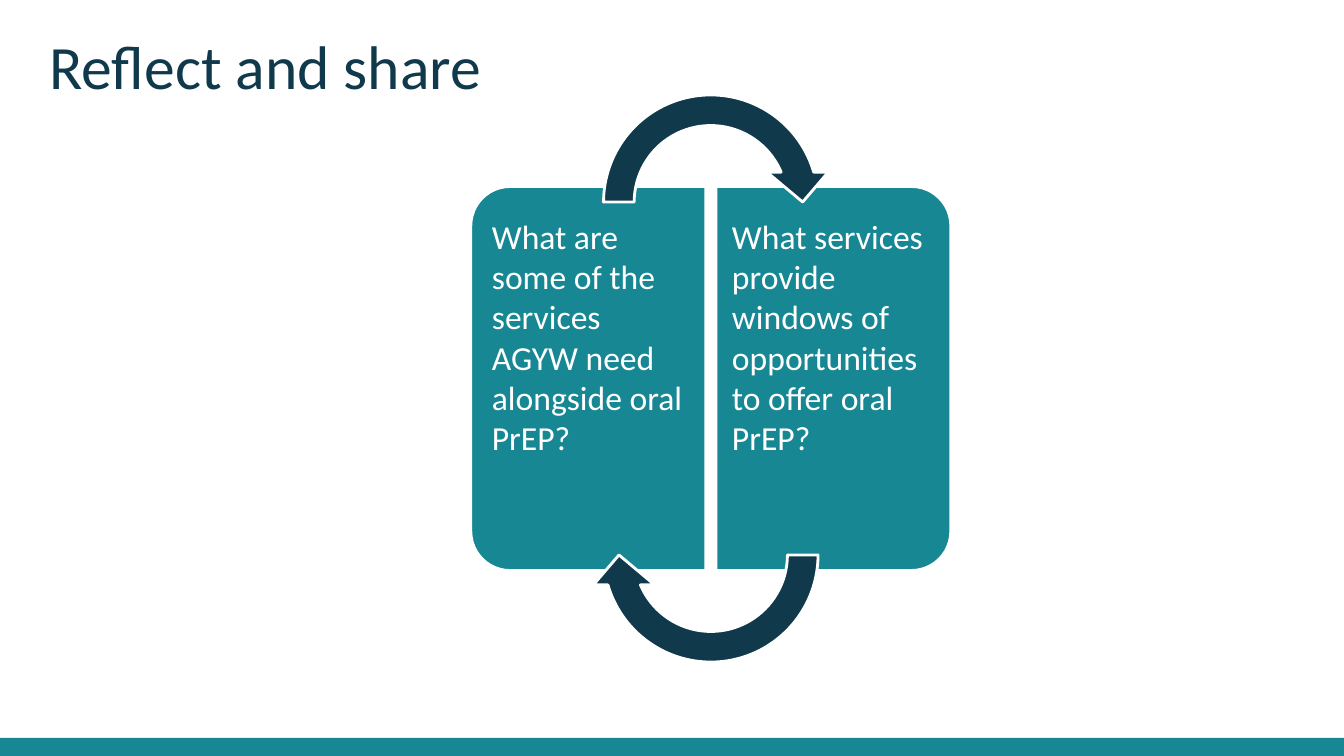
from dataclasses import dataclass

from pptx import Presentation
from pptx.dml.color import RGBColor
from pptx.enum.shapes import MSO_SHAPE
from pptx.enum.text import MSO_ANCHOR, PP_ALIGN
from pptx.util import Inches, Pt

RECTANGLE = MSO_SHAPE.RECTANGLE
CARD = MSO_SHAPE.ROUND_2_SAME_RECTANGLE
CYCLE_ARROW = MSO_SHAPE.CIRCULAR_ARROW
TOP = MSO_ANCHOR.TOP
LEFT = PP_ALIGN.LEFT
SLIDE_WIDTH, SLIDE_HEIGHT = 13.33, 7.5


@dataclass(frozen=True)
class Theme:
    teal: RGBColor = RGBColor(0x17, 0x87, 0x93)
    navy: RGBColor = RGBColor(0x10, 0x39, 0x4B)
    white: RGBColor = RGBColor(0xFF, 0xFF, 0xFF)
    font: str = "Calibri"
    title_size: float = 44
    title_spacing: float = 44.8
    question_size: float = 24
    outline: float = 2


THEME = Theme()
QUESTIONS = (
    "What are some of the services AGYW need alongside oral PrEP?",
    "What services provide windows of opportunities to offer oral PrEP?",
)


def add_text(slide, box, text, *, size, color, insets=(0.1, 0.05, 0.1, 0.05), spacing=None):
    frame = slide.shapes.add_textbox(*map(Inches, box)).text_frame
    frame.word_wrap = True
    frame.vertical_anchor = TOP
    frame.margin_left, frame.margin_top, frame.margin_right, frame.margin_bottom = map(Inches, insets)
    paragraph = frame.paragraphs[0]
    paragraph.alignment = LEFT
    if spacing:
        paragraph.line_spacing = Pt(spacing)
    run = paragraph.add_run()
    run.text = text
    run.font.name = THEME.font
    run.font.size = Pt(size)
    run.font.color.rgb = color


def add_block(slide, kind, box, fill, *, rotation=0, adjustments=(), outlined=True):
    block = slide.shapes.add_shape(kind, *map(Inches, box))
    block.shadow.inherit = False
    block.rotation = rotation
    for index, value in enumerate(adjustments):
        block.adjustments[index] = value
    block.fill.solid()
    block.fill.fore_color.rgb = fill
    if outlined:
        block.line.color.rgb = THEME.white
        block.line.width = Pt(THEME.outline)
    else:
        block.line.fill.background()


def add_footer(slide, box):
    add_block(slide, RECTANGLE, box, THEME.teal, outlined=False)


def add_title(slide, box):
    add_text(slide, box, "Reflect and share", size=THEME.title_size,
             color=THEME.navy, spacing=THEME.title_spacing)


def add_question(slide, box, question, *, rotation, outer_left):
    left, top, width, height = box
    add_block(slide, CARD, (left + (width - height) / 2, top + (height - width) / 2, height, width),
              THEME.teal, rotation=rotation, adjustments=(0.167, 0))
    outer, inner = 0.11, 0.01
    text_left = left + (outer if outer_left else inner)
    insets = (0.1, 0.17, 0.15, 0.17) if outer_left else (0.15, 0.17, 0.1, 0.17)
    add_text(slide, (text_left, top + 0.12, width - outer - inner, height - 0.23), question,
             size=THEME.question_size, color=THEME.white, insets=insets)


def add_cycle(slide, box):
    left, top, width, height = box
    card_width, card_height, arrow_size = 2.33, 3.81, 2.43
    card_top = top + 1.06
    pitch = width - card_width
    for index, question in enumerate(QUESTIONS):
        add_question(slide, (left + index * pitch, card_top, card_width, card_height), question,
                     rotation=90 if index else 270, outer_left=index == 0)
    arrow_left = left + (width - arrow_size) / 2
    for arrow_top, rotation in ((top, 0), (top + height - arrow_size, 180)):
        add_block(slide, CYCLE_ARROW, (arrow_left, arrow_top, arrow_size, arrow_size), THEME.navy,
                  rotation=rotation, adjustments=(0.125, 11.42, 204.58, 108, 0.125))


def main():
    deck = Presentation()
    deck.slide_width, deck.slide_height = Inches(SLIDE_WIDTH), Inches(SLIDE_HEIGHT)
    slide = deck.slides.add_slide(deck.slide_layouts[6])
    add_footer(slide, (0, 7.32, SLIDE_WIDTH, SLIDE_HEIGHT - 7.32))
    add_title(slide, (0.39, 0.34, 5.51, 6.17))
    add_cycle(slide, (4.67, 0.79, 4.76, 5.93))
    deck.save("out.pptx")


if __name__ == "__main__":
    main()
